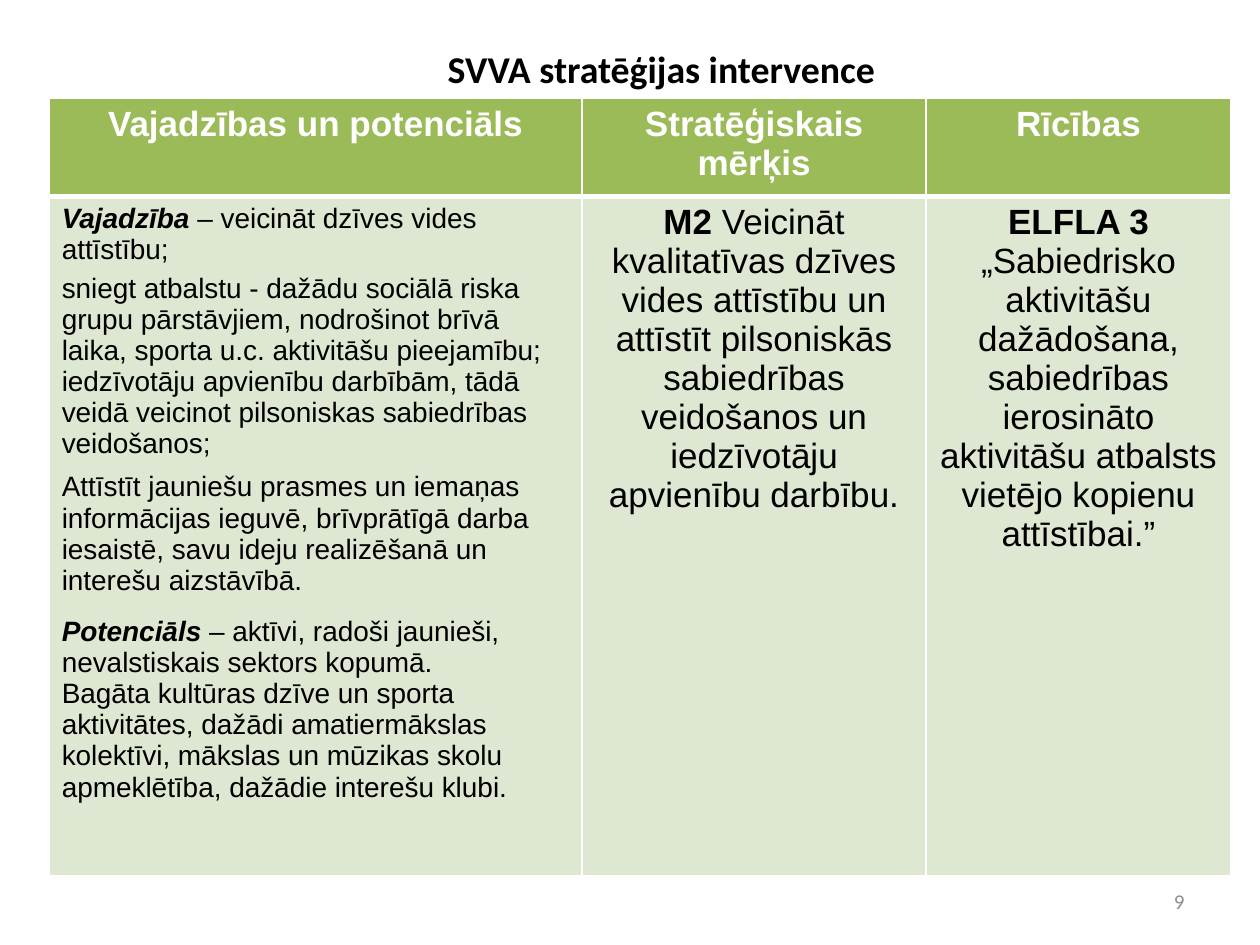
from lxml.etree import SubElement
from pptx import Presentation
from pptx.dml.color import RGBColor
from pptx.enum.text import MSO_ANCHOR as Anchor, PP_ALIGN as Align
from pptx.oxml.ns import qn
from pptx.util import Inches, Pt

WHITE, BLACK, GREY = "FFFFFF", "000000", "8C8C8C"
HEADER_GREEN, BODY_GREEN = "9BBB59", "DEE7D1"
BOLD, BOLD_ITALIC = {"bold": True}, {"bold": True, "italic": True}

COLUMN_WIDTHS = [4.23, 2.73, 2.42]
ROW_HEIGHTS = [0.78, 5.39]
HEADERS = ["Vajadzības un potenciāls", "Stratēģiskais mērķis", "Rīcības"]

# Each paragraph: space before in points, then its spans as (text, format).
NEEDS = [
    (0, [("Vajadzība ", BOLD_ITALIC), ("– veicināt dzīves vides attīstību;", {})]),
    (4.6, [("sniegt atbalstu - dažādu sociālā riska grupu pārstāvjiem, nodrošinot "
            "brīvā laika, sporta u.c. aktivitāšu pieejamību;", {})]),
    (0, [("iedzīvotāju apvienību darbībām, tādā veidā veicinot pilsoniskas "
          "sabiedrības veidošanos;", {})]),
    (6.9, [("Attīstīt jauniešu prasmes un iemaņas informācijas ieguvē, brīvprātīgā "
            "darba iesaistē, savu ideju realizēšanā un interešu aizstāvībā.", {})]),
    (11.5, [("Potenciāls", BOLD_ITALIC),
            (" – aktīvi, radoši jaunieši, nevalstiskais sektors kopumā.", {})]),
    (0, [("Bagāta kultūras dzīve un sporta aktivitātes, dažādi amatiermākslas "
          "kolektīvi, mākslas un mūzikas skolu apmeklētība, dažādie interešu "
          "klubi.", {})]),
]
GOAL = [(0, [("M2", BOLD),
             (" Veicināt kvalitatīvas dzīves vides attīstību un attīstīt pilsoniskās "
              "sabiedrības veidošanos un iedzīvotāju apvienību darbību.", {})])]
ACTION = [(0, [("ELFLA 3 ", BOLD),
               ("„Sabiedrisko aktivitāšu dažādošana, sabiedrības ierosināto aktivitāšu "
                "atbalsts vietējo kopienu attīstībai.”", {})])]


def color(value):
    return RGBColor.from_string(value)


def write(frame, paragraphs, size, font="Arial", fill=BLACK, align=Align.LEFT):
    for index, (gap, spans) in enumerate(paragraphs):
        para = frame.add_paragraph() if index else frame.paragraphs[0]
        para.alignment = align
        para.space_before = Pt(gap)
        for text, changes in spans:
            span = para.add_run()
            span.text = text
            formats = {"name": font, "size": Pt(size), "bold": False, "italic": False}
            for key, value in (formats | changes).items():
                setattr(span.font, key, value)
            span.font.color.rgb = color(fill)


def set_borders(cell, widths):
    """Draw white borders; widths maps the sides L, R, T, B to points."""
    properties = cell._tc.get_or_add_tcPr()
    for index, (side, width) in enumerate(widths.items()):
        line = properties.makeelement(qn(f"a:ln{side}"), {"w": str(Pt(width))})
        fill = SubElement(line, qn("a:solidFill"))
        SubElement(fill, qn("a:srgbClr"), val=WHITE)
        properties.insert(index, line)


def fill_cell(cell, background, borders, paragraphs, **text_format):
    cell.fill.solid()
    cell.fill.fore_color.rgb = color(background)
    set_borders(cell, {"L": 1, "R": 1, "T": 1, "B": 1} | borders)
    write(cell.text_frame, paragraphs, **text_format)


def add_title(slide, text):
    title = slide.shapes.title
    title.left, title.top = Inches(1), Inches(0.3)
    title.width, title.height = Inches(8.5), Inches(0.48)
    title.text_frame.vertical_anchor = Anchor.MIDDLE
    write(title.text_frame, [(0, [(text, BOLD)])], 21.6, "Calibri", align=Align.CENTER)


def add_strategy_table(slide):
    table = slide.shapes.add_table(
        len(ROW_HEIGHTS), len(COLUMN_WIDTHS), Inches(0.39), Inches(0.78),
        Inches(sum(COLUMN_WIDTHS)), Inches(sum(ROW_HEIGHTS))).table
    for column, width in zip(table.columns, COLUMN_WIDTHS):
        column.width = Inches(width)
    for row, height in zip(table.rows, ROW_HEIGHTS):
        row.height = Inches(height)
    for index, text in enumerate(HEADERS):
        fill_cell(table.cell(0, index), HEADER_GREEN, {"B": 3}, [(0, [(text, BOLD)])],
                  size=20, fill=WHITE, align=Align.CENTER)
    fill_cell(table.cell(1, 0), BODY_GREEN, {"T": 3}, NEEDS, size=16)
    for index, paragraphs in enumerate([GOAL, ACTION], start=1):
        fill_cell(table.cell(1, index), BODY_GREEN, {"T": 3}, paragraphs,
                  size=20, align=Align.CENTER)


def add_page_number(slide, number):
    box = slide.shapes.add_textbox(Inches(7.17), Inches(6.95), Inches(2.33), Inches(0.4))
    frame = box.text_frame
    frame.word_wrap = True
    frame.vertical_anchor = Anchor.MIDDLE
    write(frame, [(0, [(number, {})])], 12, "Calibri", GREY, Align.RIGHT)


def main():
    deck = Presentation()
    deck.slide_width, deck.slide_height = Inches(10), Inches(7.5)
    slide = deck.slides.add_slide(deck.slide_layouts[5])
    add_title(slide, "SVVA stratēģijas intervence")
    add_strategy_table(slide)
    add_page_number(slide, "9")
    deck.save("out.pptx")


if __name__ == "__main__":
    main()
